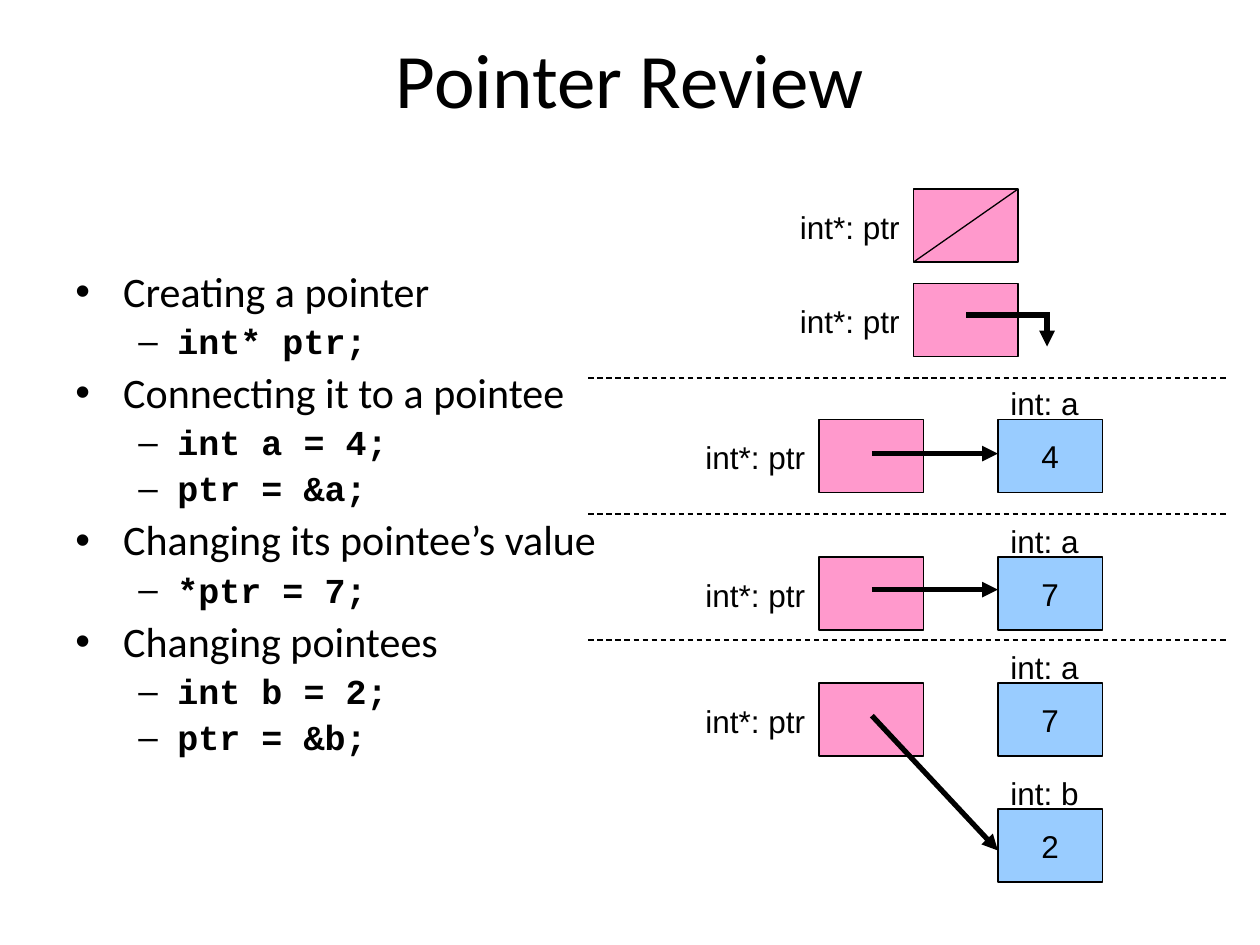
"""Build the Pointer Review slide with its bullets and memory diagrams."""
from lxml.etree import SubElement
from pptx import Presentation
from pptx.dml.color import RGBColor
from pptx.enum.dml import MSO_LINE
from pptx.enum.shapes import MSO_CONNECTOR, MSO_SHAPE
from pptx.enum.text import MSO_ANCHOR, PP_ALIGN
from pptx.oxml.ns import qn
from pptx.util import Inches, Pt

BLACK, PINK, BLUE = "000000", "FF99CC", "99CCFF"
TITLE = {"name": "Calibri", "size": Pt(44)}
TOPIC = {"name": "Calibri", "size": Pt(24), "bold": False}
CODE = {"name": "Courier New", "size": Pt(20), "bold": True}
LABEL = {"name": "Arial", "size": Pt(18)}
LEVELS = [
    {"style": TOPIC, "bullet": "•", "margin": 0.38, "indent": -0.38, "before": 5.7},
    {"style": CODE, "bullet": "–", "margin": 0.81, "indent": -0.31, "before": 4.7},
]
CELL_WIDTH, CELL_HEIGHT = 0.83, 0.58


def write(para, text, style):
    span = para.add_run()
    span.text = text
    span.font.color.rgb = RGBColor.from_string(BLACK)
    for name, value in style.items():
        setattr(span.font, name, value)


def draw_line(start, end, width=0.75, arrow=False, dash=None):
    line = page.shapes.add_connector(
        MSO_CONNECTOR.STRAIGHT, *[Inches(value) for value in (*start, *end)])
    line.line.color.rgb = RGBColor.from_string(BLACK)
    line.line.width = Pt(width)
    line.line.dash_style = dash
    if arrow:
        SubElement(line.line._get_or_add_ln(), qn("a:tailEnd"), type="triangle")
    SubElement(line._element.spPr, qn("a:effectLst"))


deck = Presentation()
deck.slide_width, deck.slide_height = Inches(10), Inches(7.5)
page = deck.slides.add_slide(deck.slide_layouts[6])

title = page.shapes.add_textbox(Inches(0.5), Inches(0.23), Inches(9), Inches(0.77))
title.text_frame.word_wrap = True
title.text_frame.vertical_anchor = MSO_ANCHOR.MIDDLE
title.text_frame.paragraphs[0].alignment = PP_ALIGN.CENTER
write(title.text_frame.paragraphs[0], "Pointer Review", TITLE)

bullets = [
    (0, "Creating a pointer"),
    (1, "int* ptr;"),
    (0, "Connecting it to a pointee"),
    (1, "int a = 4;"),
    (1, "ptr = &a;"),
    (0, "Changing its pointee’s value"),
    (1, "*ptr = 7;"),
    (0, "Changing pointees"),
    (1, "int b = 2;"),
    (1, "ptr = &b;"),
]
body = page.shapes.add_textbox(Inches(0.5), Inches(2.1), Inches(9), Inches(4.6))
body.text_frame.word_wrap = True
for index, (depth, text) in enumerate(bullets):
    level = LEVELS[depth]
    para = body.text_frame.add_paragraph() if index else body.text_frame.paragraphs[0]
    para.level = depth
    para.line_spacing = 0.9
    para.space_before = Pt(level["before"] if index else 0)
    properties = para._p.get_or_add_pPr()
    properties.set("marL", str(Inches(level["margin"])))
    properties.set("indent", str(Inches(level["indent"])))
    SubElement(properties, qn("a:buFont"), typeface="Arial")
    SubElement(properties, qn("a:buChar"), char=level["bullet"])
    write(para, text, level["style"])

pointers = [(7.25, 1.5), (7.25, 2.25), (6.5, 3.33), (6.5, 4.42), (6.5, 5.42)]
pointees = [(3.33, "int: a", "4"), (4.42, "int: a", "7"),
            (5.42, "int: a", "7"), (6.42, "int: b", "2")]
cells = [(left, top, PINK, "", "int*: ptr", -1, 0.1) for left, top in pointers]
cells += [(7.92, top, BLUE, value, name, 0, -0.33) for top, name, value in pointees]
for left, top, colour, value, name, shift, drop in cells:
    cell = page.shapes.add_shape(MSO_SHAPE.RECTANGLE, Inches(left), Inches(top),
                                 Inches(CELL_WIDTH), Inches(CELL_HEIGHT))
    cell.shadow.inherit = False
    cell.fill.solid()
    cell.fill.fore_color.rgb = RGBColor.from_string(colour)
    cell.line.color.rgb = RGBColor.from_string(BLACK)
    cell.line.width = Pt(0.75)
    if value:
        cell.text_frame.vertical_anchor = MSO_ANCHOR.MIDDLE
        cell.text_frame.paragraphs[0].alignment = PP_ALIGN.CENTER
        write(cell.text_frame.paragraphs[0], value, LABEL)
    label = page.shapes.add_textbox(Inches(left + shift), Inches(top + drop),
                                    Inches(1.08), Inches(0.4))
    label.text_frame.word_wrap = True
    write(label.text_frame.paragraphs[0], name, LABEL)

for height in (3, 4.08, 5.08):
    draw_line((4.67, height), (9.75, height), dash=MSO_LINE.DASH)
for start, end in ((3.6, 3.6), (4.68, 4.68), (5.68, 6.75)):
    draw_line((6.92, start), (7.92, end), width=3, arrow=True)
draw_line((8.31, 2.5), (8.31, 2.75), width=3, arrow=True)
draw_line((7.67, 2.5), (8.33, 2.5), width=3)
draw_line((8.08, 1.5), (7.25, 2.08))

deck.save("out.pptx")
